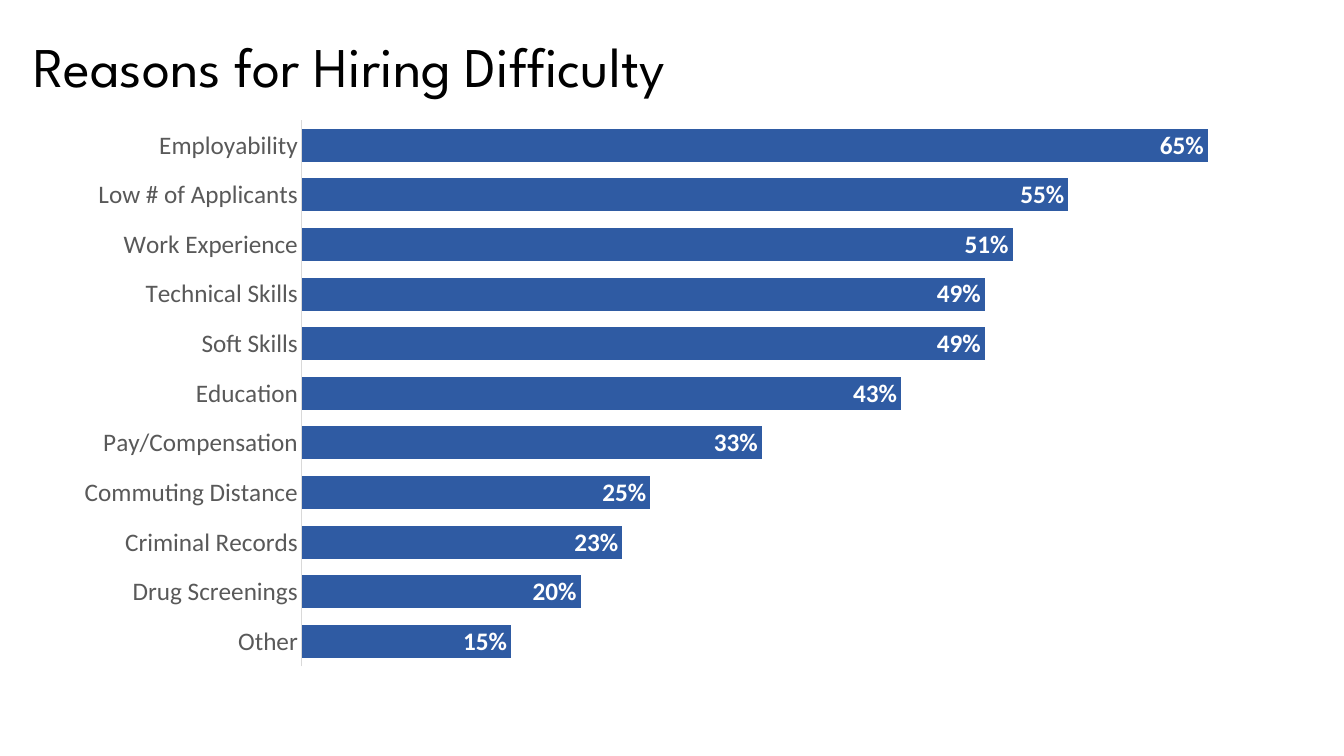
"""Build a slide with a bar chart of the reasons for hiring difficulty."""
from typing import NamedTuple

from lxml.etree import SubElement
from pptx import Presentation
from pptx.chart.chart import Chart
from pptx.chart.data import CategoryChartData
from pptx.dml.color import RGBColor as Rgb
from pptx.enum.chart import XL_CHART_TYPE as ChartType
from pptx.enum.chart import XL_LABEL_POSITION as LabelPosition
from pptx.enum.chart import XL_TICK_LABEL_POSITION as TickLabels
from pptx.enum.chart import XL_TICK_MARK as TickMark
from pptx.enum.text import MSO_AUTO_SIZE as AutoSize
from pptx.oxml.ns import qn
from pptx.slide import Slide
from pptx.text.text import Font
from pptx.util import Inches, Pt

COLORS = {
    "title": "000000",
    "axis_text": "595959",
    "axis_line": "D9D9D9",
    "bar": "2F5BA3",
    "value": "FFFFFF",
}


class Reason(NamedTuple):
    """A reason and the share of employers naming it."""

    name: str
    share: float


REASONS = [
    Reason("Employability", 0.65),
    Reason("Low # of Applicants", 0.55),
    Reason("Work Experience", 0.51),
    Reason("Technical Skills", 0.49),
    Reason("Soft Skills", 0.49),
    Reason("Education", 0.43),
    Reason("Pay/Compensation", 0.33),
    Reason("Commuting Distance", 0.25),
    Reason("Criminal Records", 0.23),
    Reason("Drug Screenings", 0.2),
    Reason("Other", 0.15),
]


def style_font(font: Font, face: str, size: float, color: str, bold: bool = False) -> None:
    """Set the face, size, colour and weight of a font."""
    font.name = face
    font.size = Pt(size)
    font.bold = bold
    font.color.rgb = Rgb.from_string(COLORS[color])


def place_plot(chart: Chart, x: float, y: float, w: float, h: float) -> None:
    """Fix the inner plot area as fractions of the chart."""
    plot_area = chart.plots[0]._element.getparent()
    layout = plot_area.find(qn("c:layout"))
    if layout is None:
        layout = SubElement(plot_area, qn("c:layout"))
        plot_area.insert(0, layout)
    manual = SubElement(layout, qn("c:manualLayout"))
    settings = {"layoutTarget": "inner", "xMode": "edge", "yMode": "edge",
                "x": x, "y": y, "w": w, "h": h}
    for tag, value in settings.items():
        SubElement(manual, qn(f"c:{tag}")).set("val", str(value))


def add_reasons_chart(slide: Slide) -> None:
    """Draw the reasons as bars, the most frequent on top."""
    bottom_up = REASONS[::-1]
    shares = CategoryChartData(number_format="0%")
    shares.categories = [reason.name for reason in bottom_up]
    shares.add_series("Series 1", [reason.share for reason in bottom_up])
    chart = slide.shapes.add_chart(
        ChartType.BAR_CLUSTERED, Inches(0), Inches(1.04), Inches(12.85), Inches(5.72), shares
    ).chart
    chart.has_legend = False
    chart.has_title = False
    style_font(chart.font, "Calibri", 10, "title")
    place_plot(chart, 0.233, 0.027, 0.753, 0.947)

    reason_axis = chart.category_axis
    reason_axis.major_tick_mark = TickMark.NONE
    reason_axis.format.line.color.rgb = Rgb.from_string(COLORS["axis_line"])
    reason_axis.format.line.width = Pt(0.75)
    style_font(reason_axis.tick_labels.font, "Calibri", 18, "axis_text")

    share_axis = chart.value_axis
    share_axis.minimum_scale = 0
    share_axis.maximum_scale = 0.7
    share_axis.has_major_gridlines = False
    share_axis.major_tick_mark = TickMark.NONE
    share_axis.tick_label_position = TickLabels.NONE
    share_axis.format.line.fill.background()

    bars = chart.plots[0]
    bars.gap_width = 50
    bars.vary_by_categories = False
    series = bars.series[0]
    series.format.fill.solid()
    series.format.fill.fore_color.rgb = Rgb.from_string(COLORS["bar"])
    labels = series.data_labels
    labels.show_value = True
    labels.position = LabelPosition.INSIDE_END
    labels.number_format = "0%"
    labels.number_format_is_linked = False
    style_font(labels.font, "Calibri", 18, "value", bold=True)


def add_heading(slide: Slide) -> None:
    """Write the slide heading."""
    heading = slide.shapes.add_textbox(
        Inches(0.23), Inches(0.26), Inches(10.92), Inches(0.77)
    ).text_frame
    heading.word_wrap = True
    heading.auto_size = AutoSize.SHAPE_TO_FIT_TEXT
    heading.text = "Reasons for Hiring Difficulty"
    style_font(heading.paragraphs[0].font, "League Spartan", 40, "title")


def main() -> None:
    """Create and save the presentation."""
    deck = Presentation()
    deck.slide_width = Inches(13.33)
    deck.slide_height = Inches(7.5)
    slide = deck.slides.add_slide(deck.slide_layouts[6])
    add_reasons_chart(slide)
    add_heading(slide)
    deck.save("out.pptx")


if __name__ == "__main__":
    main()
